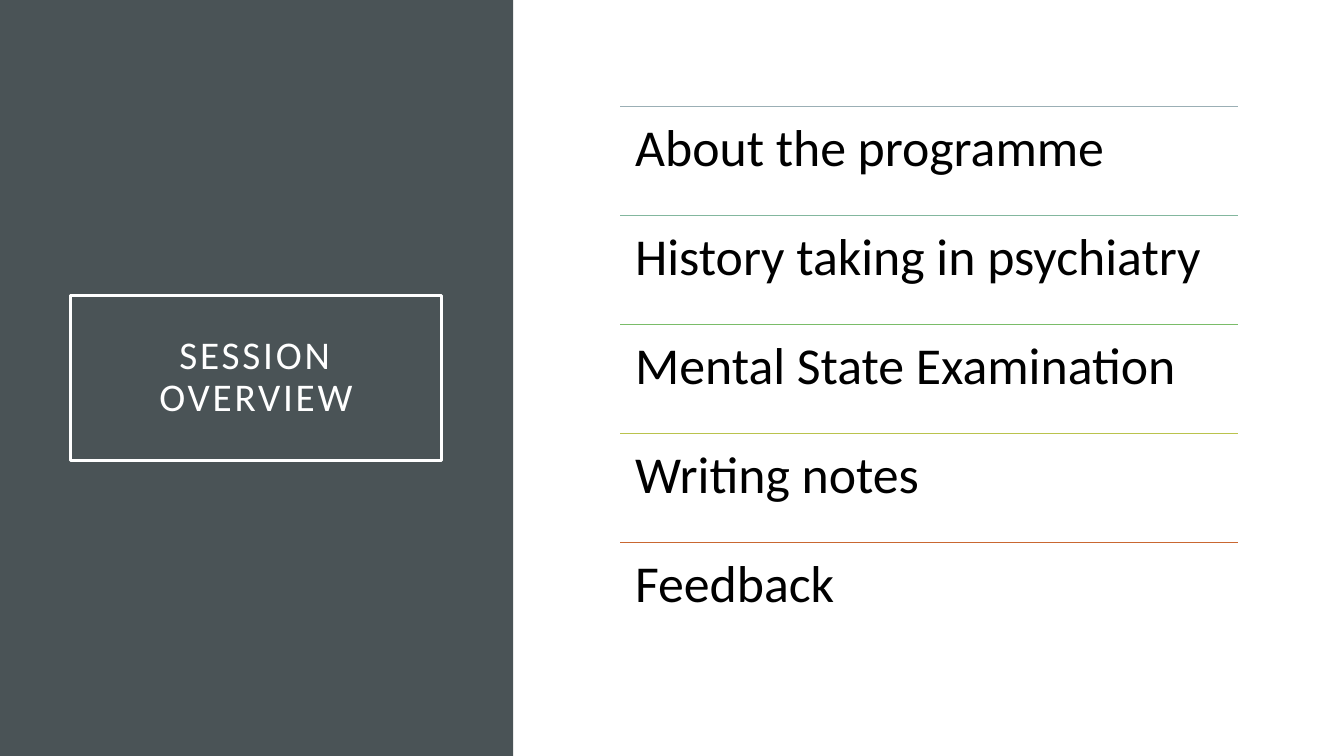
from dataclasses import dataclass

from lxml import etree
from pptx import Presentation
from pptx.dml.color import RGBColor
from pptx.enum.shapes import MSO_CONNECTOR, MSO_SHAPE
from pptx.enum.text import MSO_ANCHOR, PP_ALIGN
from pptx.oxml.ns import qn
from pptx.util import Inches, Pt

RECT = MSO_SHAPE.RECTANGLE
STRAIGHT = MSO_CONNECTOR.STRAIGHT
TOP, MIDDLE = MSO_ANCHOR.TOP, MSO_ANCHOR.MIDDLE
LEFT, CENTER = PP_ALIGN.LEFT, PP_ALIGN.CENTER


@dataclass(frozen=True)
class Theme:
    font: str = "Calibri"
    panel: str = "4A5356"
    white: str = "FFFFFF"
    black: str = "000000"
    title_size: float = 28
    item_size: float = 37
    line_spacing: float = 0.9
    item_space_after: float = 13
    title_tracking: int = 200
    frame_width: float = 2.5
    rule_width: float = 0.5


class SlideBuilder:
    def __init__(self, slide, theme):
        self.slide = slide
        self.theme = theme

    def box(self, x, y, w, h, fill=None, line=None):
        sp = self.slide.shapes.add_shape(RECT, Inches(x), Inches(y), Inches(w), Inches(h))
        sp.shadow.inherit = False
        if fill:
            sp.fill.solid()
            sp.fill.fore_color.rgb = RGBColor.from_string(fill)
        else:
            sp.fill.background()
        if line:
            sp.line.color.rgb = RGBColor.from_string(line)
            sp.line.width = Pt(self.theme.frame_width)
        else:
            sp.line.fill.background()
        return sp

    def set_text(self, sp, text, size, color, inset, align=LEFT, anchor=TOP):
        tf = sp.text_frame
        tf.word_wrap = True
        tf.vertical_anchor = anchor
        tf.margin_left = tf.margin_right = Inches(inset)
        tf.margin_top = tf.margin_bottom = Inches(inset)
        tf.text = text
        p = tf.paragraphs[0]
        p.alignment = align
        p.line_spacing = self.theme.line_spacing
        r = p.runs[0]
        r.font.name = self.theme.font
        r.font.size = Pt(size)
        r.font.color.rgb = RGBColor.from_string(color)
        return p

    def title(self, text, x, y, w, h):
        t = self.theme
        sp = self.box(x, y, w, h, line=t.white)
        p = self.set_text(sp, text, t.title_size, t.white, 0.2, CENTER, MIDDLE)
        p.runs[0].font._element.set("spc", str(t.title_tracking))

    def rule(self, x, y, w, color):
        line = self.slide.shapes.add_connector(
            STRAIGHT, Inches(x), Inches(y), Inches(x + w), Inches(y))
        line.line.color.rgb = RGBColor.from_string(color)
        line.line.width = Pt(self.theme.rule_width)
        etree.SubElement(line._element.spPr, qn("a:effectLst"))

    def item(self, text, x, y, w, h):
        t = self.theme
        sp = self.slide.shapes.add_textbox(Inches(x), Inches(y), Inches(w), Inches(h))
        p = self.set_text(sp, text, t.item_size, t.black, 0.15)
        p.space_after = Pt(t.item_space_after)


AGENDA = [
    ("About the programme", "9BAFB5"),
    ("History taking in psychiatry", "83B79E"),
    ("Mental State Examination", "7ABC69"),
    ("Writing notes", "BAC34D"),
    ("Feedback", "C96731"),
]
AGENDA_LEFT, AGENDA_TOP = 6.15, 1.06
AGENDA_WIDTH, ROW_HEIGHT = 6.13, 1.08


def main():
    prs = Presentation()
    prs.slide_width = Inches(13.33)
    prs.slide_height = Inches(7.5)
    s = prs.slides.add_slide(prs.slide_layouts[6])
    theme = Theme()
    builder = SlideBuilder(s, theme)

    builder.box(0, 0, 5.09, 7.5, fill=theme.panel)
    builder.title("SESSION OVERVIEW", 0.7, 2.93, 3.68, 1.64)
    for i, (text, color) in enumerate(AGENDA):
        y = AGENDA_TOP + i * ROW_HEIGHT
        builder.rule(AGENDA_LEFT, y, AGENDA_WIDTH, color)
        builder.item(text, AGENDA_LEFT, y, AGENDA_WIDTH, ROW_HEIGHT)

    prs.save("out.pptx")


if __name__ == "__main__":
    main()
